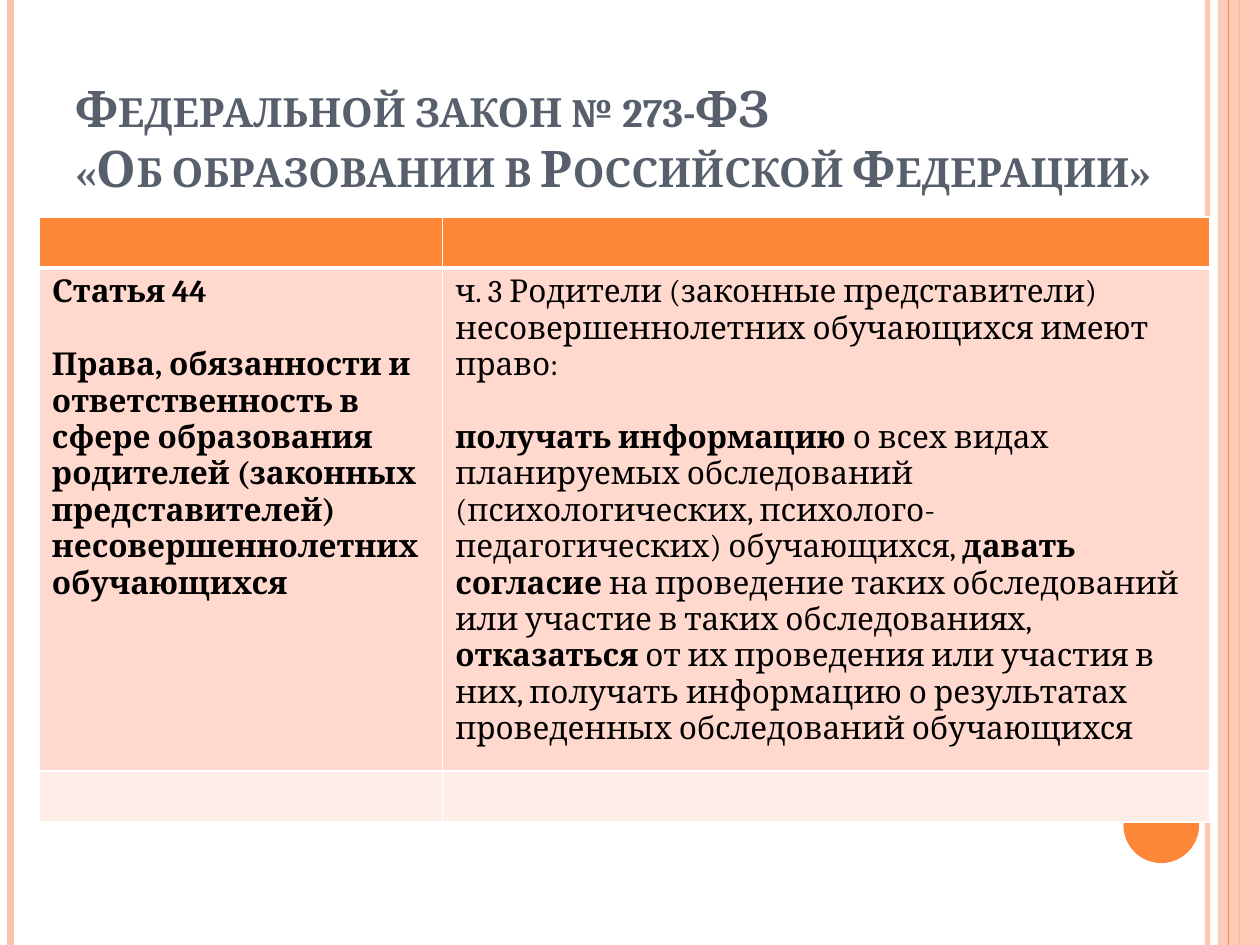
from lxml.etree import SubElement
from pptx import Presentation
from pptx.dml.color import RGBColor
from pptx.enum.shapes import MSO_CONNECTOR, MSO_SHAPE
from pptx.enum.text import MSO_ANCHOR
from pptx.oxml.ns import qn
from pptx.util import Pt

COLORS = {"white": "FFFFFF", "black": "000000", "slate": "575F6D", "orange": "FE8637",
          "peach": "FEC3AE", "band": "FFD9CE", "pale": "FFEDE8"}


def rgb(name):
    return RGBColor.from_string(COLORS[name])


def set_alpha(properties, percent):
    color = next(properties.iter(qn("a:srgbClr")))
    SubElement(color, qn("a:alpha"), val=str(percent * 1000))


def add_text(paragraph, text, size=18, color="black", bold=False, small_caps=False):
    run = paragraph.add_run()
    run.text = text
    run.font.name = "Cambria"
    run.font.size = Pt(size)
    run.font.bold = bold
    run.font.color.rgb = rgb(color)
    if small_caps:
        run.font._element.set("cap", "small")


class SlideBuilder:
    """Holds the slide and draws each kind of element in its style."""

    def __init__(self, slide):
        self.slide = slide

    def stripe(self, x, width, color, alpha=100):
        line = self.slide.shapes.add_connector(
            MSO_CONNECTOR.STRAIGHT, Pt(x), Pt(0), Pt(x), Pt(540))
        line.line.width = Pt(width)
        line.line.color.rgb = rgb(color)
        properties = line._element.spPr
        set_alpha(properties, alpha)
        SubElement(properties, qn("a:effectLst"))

    def shape(self, kind, x, y, width, height, color, alpha=100):
        shape = self.slide.shapes.add_shape(kind, Pt(x), Pt(y), Pt(width), Pt(height))
        shape.shadow.inherit = False
        shape.fill.solid()
        shape.fill.fore_color.rgb = rgb(color)
        shape.line.fill.background()
        set_alpha(shape._element.spPr, alpha)

    def title(self, x, y, width, height, lines):
        frame = self.slide.shapes.add_textbox(Pt(x), Pt(y), Pt(width), Pt(height)).text_frame
        frame.word_wrap = True
        frame.vertical_anchor = MSO_ANCHOR.BOTTOM
        paragraph = frame.paragraphs[0]
        for index, line in enumerate(lines):
            if index:
                paragraph.add_line_break()
            add_text(paragraph, line, size=28.8, color="slate", bold=True, small_caps=True)

    def cell(self, cell, paragraphs, fill, bottom):
        properties = cell._tc.get_or_add_tcPr()
        for side, width in (("L", 1), ("R", 1), ("T", 1), ("B", bottom)):
            border = SubElement(properties, qn(f"a:ln{side}"), w=str(Pt(width)))
            SubElement(SubElement(border, qn("a:solidFill")), qn("a:srgbClr"), val=COLORS["white"])
        cell.fill.solid()
        cell.fill.fore_color.rgb = rgb(fill)
        for index, runs in enumerate(paragraphs):
            frame = cell.text_frame
            paragraph = frame.add_paragraph() if index else frame.paragraphs[0]
            if index < len(paragraphs) - 1:
                paragraph.space_after = Pt(21)
            for text, bold in runs:
                add_text(paragraph, text, bold=bold)

    def table(self, x, y, widths, heights, rows, fills):
        table = self.slide.shapes.add_table(
            len(heights), len(widths), Pt(x), Pt(y), Pt(sum(widths)), Pt(sum(heights))).table
        for column, width in zip(table.columns, widths):
            column.width = Pt(width)
        for index, (row, height) in enumerate(zip(table.rows, heights)):
            row.height = Pt(height)
            for cell, paragraphs in zip(row.cells, rows[index]):
                self.cell(cell, paragraphs, fills[index], 1 if index else 3)


ARTICLE = [
    [("Статья 44", True)],
    [("Права, обязанности и ответственность в сфере образования родителей "
      "(законных представителей) несовершеннолетних обучающихся", True)],
]
RIGHTS = [
    [("ч. 3 Родители (законные представители) несовершеннолетних обучающихся имеют право:", False)],
    [("получать информацию ", True),
     ("о всех видах планируемых обследований (психологических, "
      "психолого-педагогических) обучающихся, ", False),
     ("давать согласие ", True),
     ("на проведение таких обследований или участие в таких обследованиях, ", False),
     ("отказаться", True),
     (" от их проведения или участия в них, получать информацию о результатах "
      "проведенных обследований обучающихся", False)],
]


def main():
    deck = Presentation()
    deck.slide_width, deck.slide_height = Pt(720), Pt(540)
    builder = SlideBuilder(deck.slides.add_slide(deck.slide_layouts[6]))
    builder.stripe(690, 3, "peach", alpha=93)
    builder.stripe(6, 4.5, "peach")
    builder.stripe(708, 1.5, "orange")
    builder.shape(MSO_SHAPE.RECTANGLE, 696, 0, 24, 540, "peach", alpha=87)
    builder.stripe(702, 0.75, "orange")
    builder.shape(MSO_SHAPE.OVAL, 642, 450, 43.2, 43.2, "orange")
    builder.title(36, 37.5, 650, 79,
                  ["Федеральной закон № 273-ФЗ ", "«Об образовании в Российской Федерации»"])
    builder.table(22.5, 124, [230.5, 438.5], [29.2, 277, 29.2],
                  [[[], []], [ARTICLE, RIGHTS], [[], []]], ["orange", "band", "pale"])
    deck.save("out.pptx")


if __name__ == "__main__":
    main()
